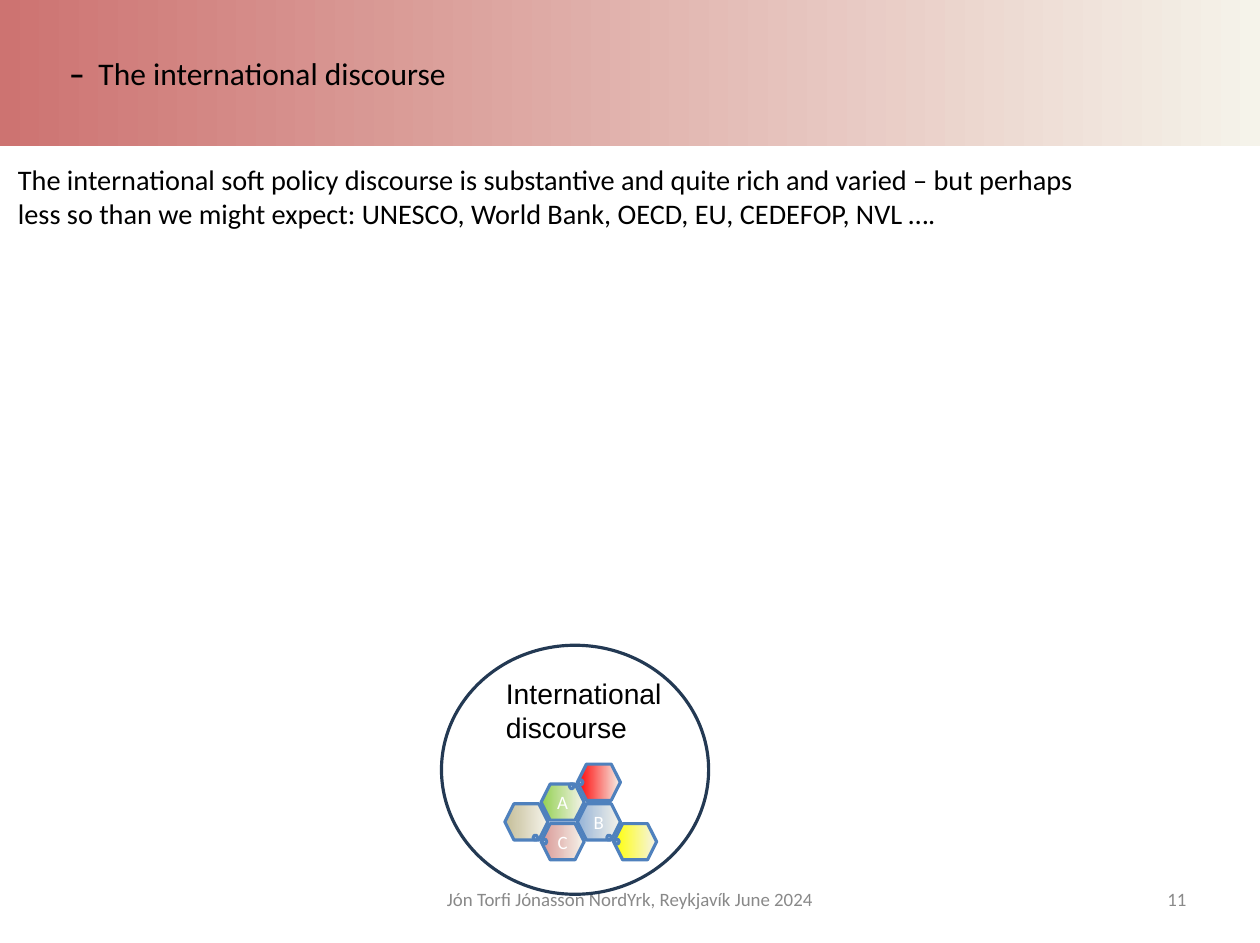
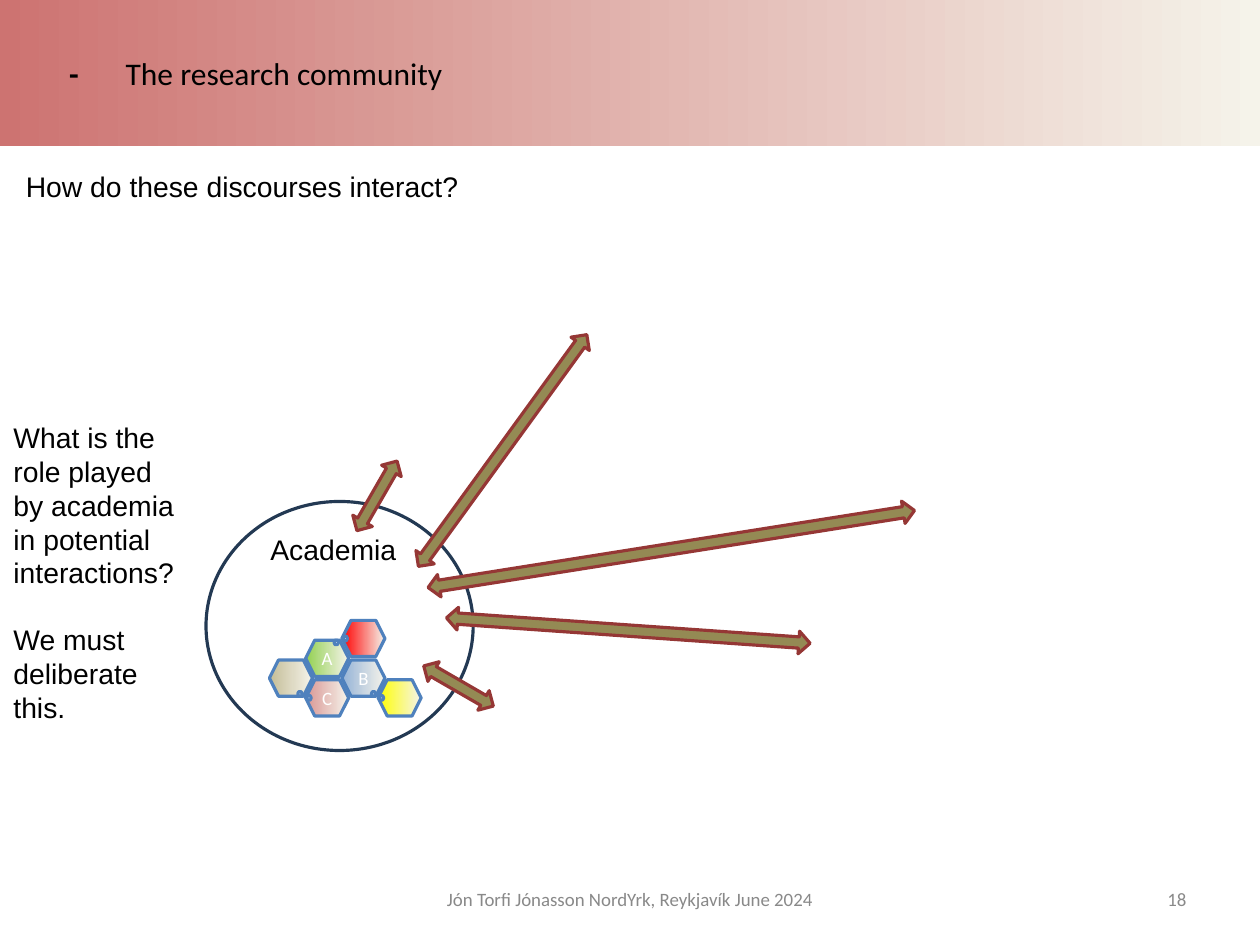
from dataclasses import dataclass

from lxml import etree
from pptx import Presentation
from pptx.dml.color import RGBColor as RGB
from pptx.enum.shapes import MSO_SHAPE as Kind
from pptx.enum.text import MSO_ANCHOR as Anchor, MSO_AUTO_SIZE as Fit, PP_ALIGN as Align
from pptx.oxml.ns import qn
from pptx.util import Inches, Pt


# Look shared by both slides
@dataclass(frozen=True)
class Theme:
    head: str = "Calibri"
    body: str = "Arial"
    ink: str = "000000"
    grey: str = "898989"
    white: str = "FFFFFF"
    band: str = "CD7371"
    pale: str = "F5F3EA"
    ring: str = "233953"
    edge: str = "4F81BD"
    arrow: str = "948A54"
    rim: str = "953735"
    title: int = 20
    text: int = 18
    small: int = 12
    line: int = 2


T = Theme()
WIDE, HIGH = 11.13, 8.33
FOOTER = "Jón Torfi Jónasson NordYrk, Reykjavík June 2024"

# Content: boxes are left, top, width, height; arrows are centre x, y, length, angle
SLIDES = [
    dict(
        title=("–", "The international discourse"), tab=0.26, page="11",
        ring=(3.9, 5.7), label="International discourse",
        notes=[((0.06, 1.38, 9.68, 0.71), T.head, [
            "The international soft policy discourse is substantive and quite rich "
            "and varied – but perhaps less so than we might expect: UNESCO, "
            "World Bank, OECD, EU, CEDEFOP, NVL …."])],
        arrows=[],
    ),
    dict(
        title=("-", "The research community"), tab=0.5, page="18",
        ring=(1.82, 4.43), label="Academia",
        notes=[
            ((0.13, 1.45, 4.07, 0.4), T.body, ["How do these discourses interact?"]),
            ((0.02, 3.66, 1.62, 2.83), T.body, [
                "What is the role played by academia in potential interactions?",
                "We must deliberate this."]),
        ],
        arrows=[(4.05, 6.06, 0.71, 120), (3.33, 4.38, 0.71, 210),
                (5.93, 4.85, 4.35, 81), (4.44, 3.98, 2.53, 36),
                (5.55, 5.57, 3.22, 94)],
    ),
]

# Honeycomb: letter, colour, column, row, offset of the small dot
CELLS = [
    ("C", "D99694", 1, 3, (0.01, 0.14)),
    ("", "C4BD97", 0, 2, (0.25, 0.28)),
    ("B", "95B3D7", 2, 2, (0.26, 0.28)),
    ("", "FFFF00", 3, 3, (0.01, 0.14)),
    ("A", "92D050", 1, 1, (0.25, 0)),
    ("", "FF0000", 2, 0, (0.01, 0.14)),
]


def rgb(code):
    return RGB.from_string(code)


def write(shape, paras, font=T.head, size=T.text, color=T.ink, align=Align.LEFT,
          anchor=Anchor.TOP, inset=(0.1, 0.05), wrap=True, gap=0, tab=None):
    """Write paragraphs; each is a string or a list of (text, bold) runs."""
    frame = shape.text_frame
    frame.auto_size, frame.word_wrap = Fit.NONE, wrap
    frame.vertical_anchor = anchor
    frame.margin_left = frame.margin_right = Inches(inset[0])
    frame.margin_top = frame.margin_bottom = Inches(inset[1])
    for i, para in enumerate(paras):
        p = frame.add_paragraph() if i else frame.paragraphs[0]
        p.alignment = align
        p.space_before = Pt(gap if i else 0)
        if tab:
            tabs = etree.SubElement(p._p.get_or_add_pPr(), qn("a:tabLst"))
            etree.SubElement(tabs, qn("a:tab"), pos=str(Inches(tab)), algn="l")
        for text, bold in [(para, False)] if isinstance(para, str) else para:
            run = p.add_run()
            run.text = text
            run.font.name, run.font.size = font, Pt(size)
            run.font.bold, run.font.color.rgb = bold, rgb(color)


def note(shapes, box, paras, **fmt):
    write(shapes.add_textbox(*map(Inches, box)), paras, **fmt)


def fade(shape, start):
    shape.fill.gradient()
    shape.fill.gradient_angle = 0
    for stop, code in zip(shape.fill.gradient_stops, (start, T.pale)):
        stop.color.rgb = rgb(code)


def draw(shapes, kind, box, line, fill=None):
    shape = shapes.add_shape(kind, *map(Inches, box))
    shape.shadow.inherit = False
    shape.line.color.rgb, shape.line.width = rgb(line), Pt(T.line)
    if fill:
        shape.fill.solid()
        shape.fill.fore_color.rgb = rgb(fill)
    else:
        shape.fill.background()
    return shape


def frame(slide, title, tab, page):
    """Title band, footer and page number."""
    band = slide.shapes.title
    band.left, band.top, band.width, band.height = map(Inches, (0, 0, WIDE, 1.29))
    fade(band, T.band)
    mark, words = title
    write(band, [[(mark + "\t", True), (words, False)]], size=T.title,
          anchor=Anchor.MIDDLE, inset=(0.61, 0.06), tab=tab)
    for box, text, align in [((3.8, 7.72, 3.53, 0.44), FOOTER, Align.CENTER),
                             ((7.98, 7.72, 2.6, 0.44), page, Align.RIGHT)]:
        note(slide.shapes, box, [text], size=T.small, color=T.grey,
             align=align, anchor=Anchor.MIDDLE)


def comb(slide, ring, label):
    """Ring with its label and the honeycomb, as one group."""
    shapes = slide.shapes.add_group_shape().shapes
    x, y = ring
    draw(shapes, Kind.OVAL, (x, y, 2.36, 2.2), T.ring)
    note(shapes, (x + 0.47, y + 0.22, 1.66, 0.71), [label], font=T.body)
    for letter, color, col, row, (dx, dy) in CELLS:
        left, top = x + 0.56 + 0.32 * col, y + 1.05 + 0.175 * row
        cell = draw(shapes, Kind.HEXAGON, (left, top, 0.38, 0.32), T.edge)
        fade(cell, color)
        if letter:
            write(cell, [letter], size=T.small, color=T.white, align=Align.CENTER,
                  anchor=Anchor.MIDDLE, inset=(0, 0), wrap=False)
        draw(shapes, Kind.HEXAGON, (left + dx, top + dy, 0.04, 0.04), T.edge, T.white)


def main():
    deck = Presentation()
    deck.slide_width, deck.slide_height = Inches(WIDE), Inches(HIGH)
    for item in SLIDES:
        slide = deck.slides.add_slide(deck.slide_layouts[5])
        frame(slide, item["title"], item["tab"], item["page"])
        comb(slide, item["ring"], item["label"])
        for x, y, size, angle in item["arrows"]:
            box = (x - 0.1, y - size / 2, 0.2, size)
            draw(slide.shapes, Kind.UP_DOWN_ARROW, box, T.rim, T.arrow).rotation = angle
        for box, font, paras in item["notes"]:
            note(slide.shapes, box, paras, font=font, gap=20.7)
    deck.save("out.pptx")


if __name__ == "__main__":
    main()
